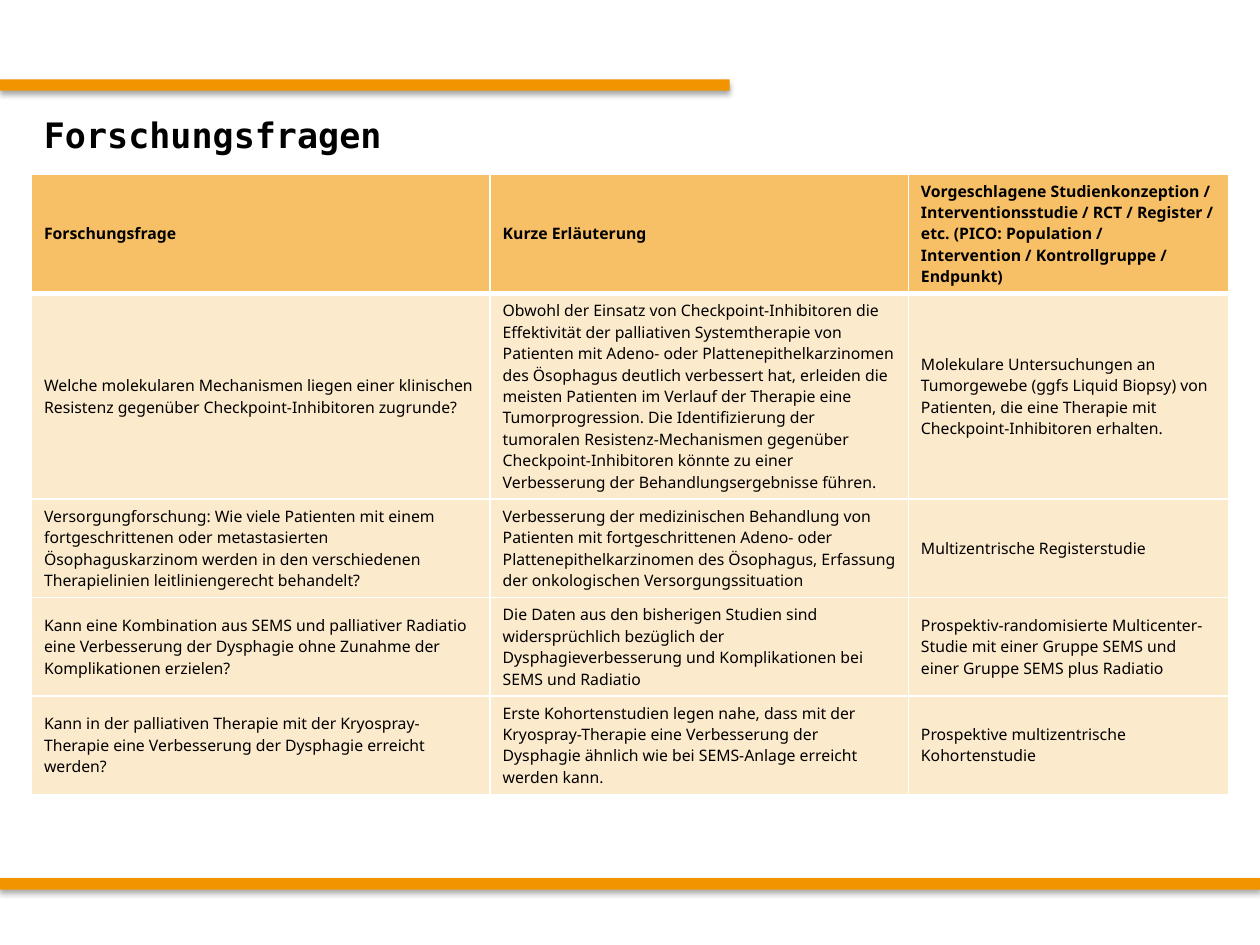
from dataclasses import dataclass

from lxml.etree import SubElement
from pptx import Presentation
from pptx.dml.color import RGBColor
from pptx.enum.shapes import MSO_SHAPE
from pptx.enum.text import MSO_ANCHOR
from pptx.oxml.ns import qn
from pptx.util import Inches, Pt


@dataclass(frozen=True)
class Theme:
    bar: str = "F29400"
    header: str = "F7BF66"
    body: str = "FCEACC"
    border: str = "FFFFFF"
    text: str = "000000"
    title_font: str = "DejaVu Sans Mono"
    table_font: str = "Noto Sans"
    title_size: int = 20
    table_size: int = 9
    thin_border: int = 1
    thick_border: int = 3


class SlideBuilder:
    def __init__(self, slide, theme):
        self.slide = slide
        self.theme = theme

    def format_text(self, text_frame, font_name, size, bold):
        for paragraph in text_frame.paragraphs:
            for run in paragraph.runs:
                run.font.name = font_name
                run.font.size = Pt(size)
                run.font.bold = bold
                run.font.color.rgb = RGBColor.from_string(self.theme.text)

    def add_bar(self, top, width):
        shape = self.slide.shapes.add_shape(
            MSO_SHAPE.RECTANGLE, 0, Inches(top), Inches(width), Inches(0.09))
        shape.fill.solid()
        shape.fill.fore_color.rgb = RGBColor.from_string(self.theme.bar)
        shape.line.fill.background()
        shape.shadow.inherit = False
        effects = shape._element.spPr.find(qn("a:effectLst"))
        shadow = SubElement(
            effects, qn("a:outerShdw"), blurRad=str(Pt(3.1)), dist=str(Pt(1.8)),
            dir="5400000", algn="ctr", rotWithShape="0")
        color = SubElement(shadow, qn("a:srgbClr"), val="000000")
        SubElement(color, qn("a:alpha"), val="35000")

    def add_title(self, text, left, top, width, height):
        shape = self.slide.shapes.add_textbox(
            Inches(left), Inches(top), Inches(width), Inches(height))
        text_frame = shape.text_frame
        text_frame.word_wrap = True
        text_frame.vertical_anchor = MSO_ANCHOR.MIDDLE
        text_frame.text = text
        self.format_text(text_frame, self.theme.title_font, self.theme.title_size, True)

    def set_borders(self, cell, top, bottom):
        """Draw all four cell borders; top and bottom are widths in points."""
        thin = self.theme.thin_border
        properties = cell._tc.get_or_add_tcPr()
        for side, width in (("L", thin), ("R", thin), ("T", top), ("B", bottom)):
            line = SubElement(properties, qn(f"a:ln{side}"), w=str(Pt(width)))
            fill = SubElement(line, qn("a:solidFill"))
            SubElement(fill, qn("a:srgbClr"), val=self.theme.border)

    def add_table(self, rows, left, top, column_widths, row_heights):
        theme = self.theme
        table = self.slide.shapes.add_table(
            len(rows), len(column_widths), Inches(left), Inches(top),
            Inches(sum(column_widths)), Inches(sum(row_heights))).table
        table.horz_banding = False
        for column, width in zip(table.columns, column_widths):
            column.width = Inches(width)
        for row, height in zip(table.rows, row_heights):
            row.height = Inches(height)
        for row_index, texts in enumerate(rows):
            is_header = row_index == 0
            top_width = theme.thick_border if row_index == 1 else theme.thin_border
            bottom_width = theme.thick_border if is_header else theme.thin_border
            for column_index, text in enumerate(texts):
                cell = table.cell(row_index, column_index)
                cell.text_frame.text = text
                cell.vertical_anchor = MSO_ANCHOR.MIDDLE
                self.format_text(
                    cell.text_frame, theme.table_font, theme.table_size, is_header)
                self.set_borders(cell, top_width, bottom_width)
                cell.fill.solid()
                cell.fill.fore_color.rgb = RGBColor.from_string(
                    theme.header if is_header else theme.body)


RESEARCH_QUESTIONS = [
    ("Forschungsfrage",
     "Kurze Erläuterung",
     "Vorgeschlagene Studienkonzeption / Interventionsstudie / RCT / Register / etc. "
     "(PICO: Population / Intervention / Kontrollgruppe / Endpunkt)"),
    ("Welche molekularen Mechanismen liegen einer klinischen Resistenz gegenüber "
     "Checkpoint-Inhibitoren zugrunde?",
     "Obwohl der Einsatz von Checkpoint-Inhibitoren die Effektivität der palliativen "
     "Systemtherapie von Patienten mit Adeno- oder Plattenepithelkarzinomen des Ösophagus "
     "deutlich verbessert hat, erleiden die meisten Patienten im Verlauf der Therapie eine "
     "Tumorprogression. Die Identifizierung der tumoralen Resistenz-Mechanismen gegenüber "
     "Checkpoint-Inhibitoren könnte zu einer Verbesserung der Behandlungsergebnisse führen.",
     "Molekulare Untersuchungen an Tumorgewebe (ggfs Liquid Biopsy) von Patienten, die eine "
     "Therapie mit Checkpoint-Inhibitoren erhalten."),
    ("Versorgungforschung: Wie viele Patienten mit einem fortgeschrittenen oder "
     "metastasierten Ösophaguskarzinom werden in den verschiedenen Therapielinien "
     "leitliniengerecht behandelt?",
     "Verbesserung der medizinischen Behandlung von Patienten mit fortgeschrittenen Adeno- "
     "oder Plattenepithelkarzinomen des Ösophagus, Erfassung der onkologischen "
     "Versorgungssituation",
     "Multizentrische Registerstudie"),
    ("Kann eine Kombination aus SEMS und palliativer Radiatio eine Verbesserung der "
     "Dysphagie ohne Zunahme der Komplikationen erzielen?",
     "Die Daten aus den bisherigen Studien sind widersprüchlich bezüglich der "
     "Dysphagieverbesserung und Komplikationen bei SEMS und Radiatio",
     "Prospektiv-randomisierte Multicenter-Studie mit einer Gruppe SEMS und einer Gruppe "
     "SEMS plus Radiatio"),
    ("Kann in der palliativen Therapie mit der Kryospray-Therapie eine Verbesserung der "
     "Dysphagie erreicht werden?",
     "Erste Kohortenstudien legen nahe, dass mit der Kryospray-Therapie eine Verbesserung "
     "der Dysphagie ähnlich wie bei SEMS-Anlage erreicht werden kann.",
     "Prospektive multizentrische Kohortenstudie"),
]


def main():
    presentation = Presentation()
    presentation.slide_width = Inches(10)
    presentation.slide_height = Inches(7.5)
    slide = presentation.slides.add_slide(presentation.slide_layouts[6])

    builder = SlideBuilder(slide, Theme())
    builder.add_bar(top=0.63, width=5.79)
    builder.add_bar(top=6.97, width=10)
    builder.add_table(
        RESEARCH_QUESTIONS, left=0.25, top=1.38,
        column_widths=[3.64, 3.32, 2.54],
        row_heights=[0.94, 1.63, 0.78, 0.78, 0.78])
    builder.add_title("Forschungsfragen", left=0.25, top=0.83, width=9.5, height=0.48)
    presentation.save("out.pptx")


if __name__ == "__main__":
    main()
